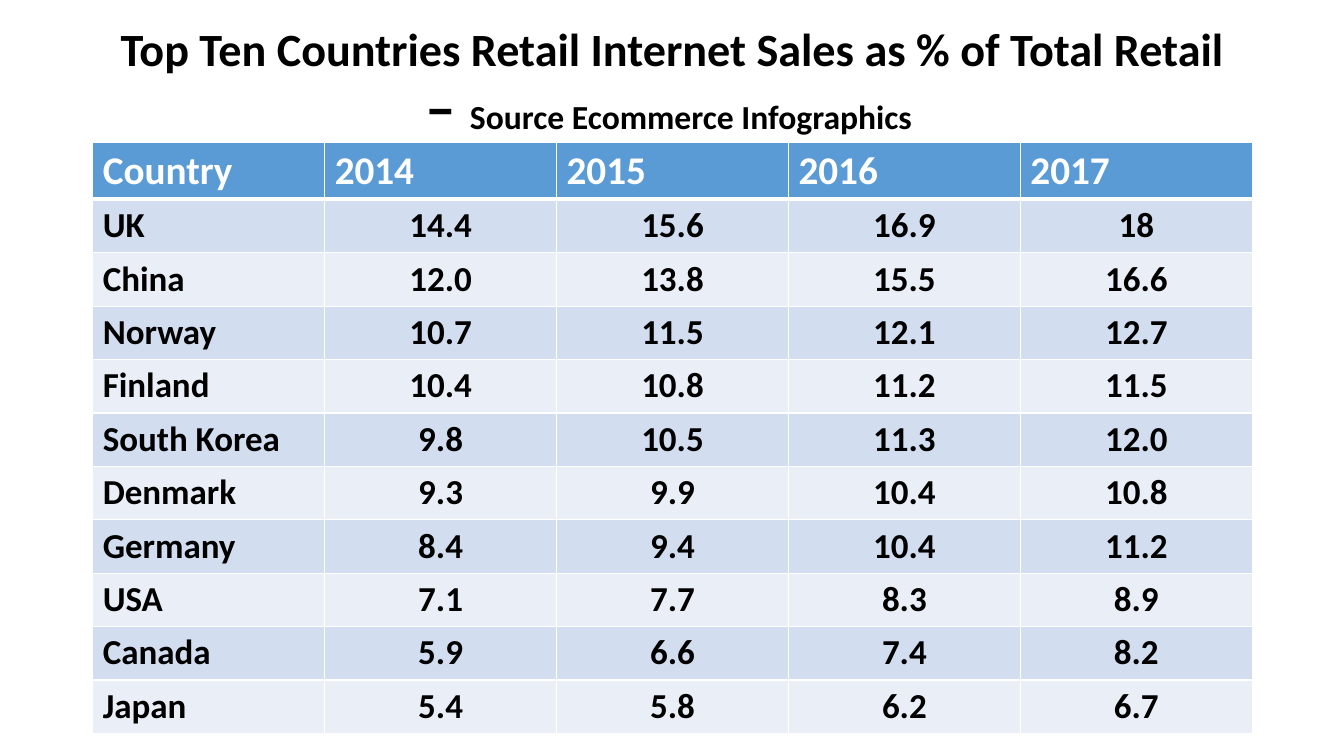
import pptx
import pptx.dml.color
import pptx.enum.text
import pptx.oxml
import pptx.oxml.ns
import pptx.util
from pptx.util import Inches

COLORS = {
    "text": "000000",
    "header_text": "FFFFFF",
    "header": "5B9BD5",
    "odd_row": "D2DEEF",
    "even_row": "EAEFF7",
    "border": "FFFFFF",
}
CENTER = pptx.enum.text.PP_ALIGN.CENTER
LEFT = pptx.enum.text.PP_ALIGN.LEFT

TITLE_RUNS = [
    ("Top Ten Countries Retail Internet Sales as % of Total Retail ", 33),
    ("– ", 44),
    ("Source Ecommerce Infographics ", 24),
]
SALES = [
    ("Country", "2014", "2015", "2016", "2017"),
    ("UK", "14.4", "15.6", "16.9", "18"),
    ("China", "12.0", "13.8", "15.5", "16.6"),
    ("Norway", "10.7", "11.5", "12.1", "12.7"),
    ("Finland", "10.4", "10.8", "11.2", "11.5"),
    ("South Korea", "9.8", "10.5", "11.3", "12.0"),
    ("Denmark", "9.3", "9.9", "10.4", "10.8"),
    ("Germany", "8.4", "9.4", "10.4", "11.2"),
    ("USA", "7.1", "7.7", "8.3", "8.9"),
    ("Canada", "5.9", "6.6", "7.4", "8.2"),
    ("Japan", "5.4", "5.8", "6.2", "6.7"),
]


def rgb(name):
    return pptx.dml.color.RGBColor.from_string(COLORS[name])


def add_run(paragraph, text, size, color):
    run = paragraph.add_run()
    run.text = text
    font_format = {"name": "Calibri", "size": pptx.util.Pt(size), "bold": True}
    for attribute, value in font_format.items():
        setattr(run.font, attribute, value)
    run.font.color.rgb = rgb(color)


def set_borders(cell, widths):
    """Draw cell borders; widths maps the sides L, R, T, B, in that order, to points."""
    properties = cell._tc.get_or_add_tcPr()
    for position, (side, width) in enumerate(widths.items()):
        line = pptx.oxml.parse_xml(
            f'<a:ln{side} {pptx.oxml.ns.nsdecls("a")} w="{pptx.util.Pt(width)}">'
            f'<a:solidFill><a:srgbClr val="{COLORS["border"]}"/></a:solidFill>'
            f'</a:ln{side}>'
        )
        properties.insert(position, line)


def add_title(slide, left, top, width, height):
    frame = slide.shapes.add_textbox(left, top, width, height).text_frame
    frame.word_wrap = True
    frame.vertical_anchor = pptx.enum.text.MSO_ANCHOR.MIDDLE
    paragraph = frame.paragraphs[0]
    paragraph.alignment = CENTER
    paragraph.line_spacing = 0.9
    for text, size in TITLE_RUNS:
        add_run(paragraph, text, size, "text")


def add_sales_table(slide, left, top, width, header_height, row_height):
    row_count, column_count = len(SALES), len(SALES[0])
    height = header_height + row_height * (row_count - 1)
    table = slide.shapes.add_table(
        row_count, column_count, left, top, width, height
    ).table
    for row_index, values in enumerate(SALES):
        is_header = row_index == 0
        table.rows[row_index].height = header_height if is_header else row_height
        if is_header:
            fill, color, size = "header", "header_text", 28
        else:
            fill = "odd_row" if row_index % 2 else "even_row"
            color, size = "text", 25
        borders = {
            "L": 1,
            "R": 1,
            "T": 3 if row_index == 1 else 1,
            "B": 3 if is_header else 1,
        }
        for column_index, value in enumerate(values):
            cell = table.cell(row_index, column_index)
            cell.fill.solid()
            cell.fill.fore_color.rgb = rgb(fill)
            set_borders(cell, borders)
            paragraph = cell.text_frame.paragraphs[0]
            paragraph.alignment = LEFT if is_header or column_index == 0 else CENTER
            add_run(paragraph, value, size, color)


def main():
    presentation = pptx.Presentation()
    presentation.slide_width = Inches(13.33)
    presentation.slide_height = Inches(7.5)
    slide = presentation.slides.add_slide(presentation.slide_layouts[6])
    left, width = Inches(0.92), Inches(11.5)
    add_title(slide, left, Inches(0.28), width, Inches(1.12))
    add_sales_table(slide, left, Inches(1.41), width, Inches(0.56), Inches(0.53))
    presentation.save("out.pptx")


if __name__ == "__main__":
    main()
